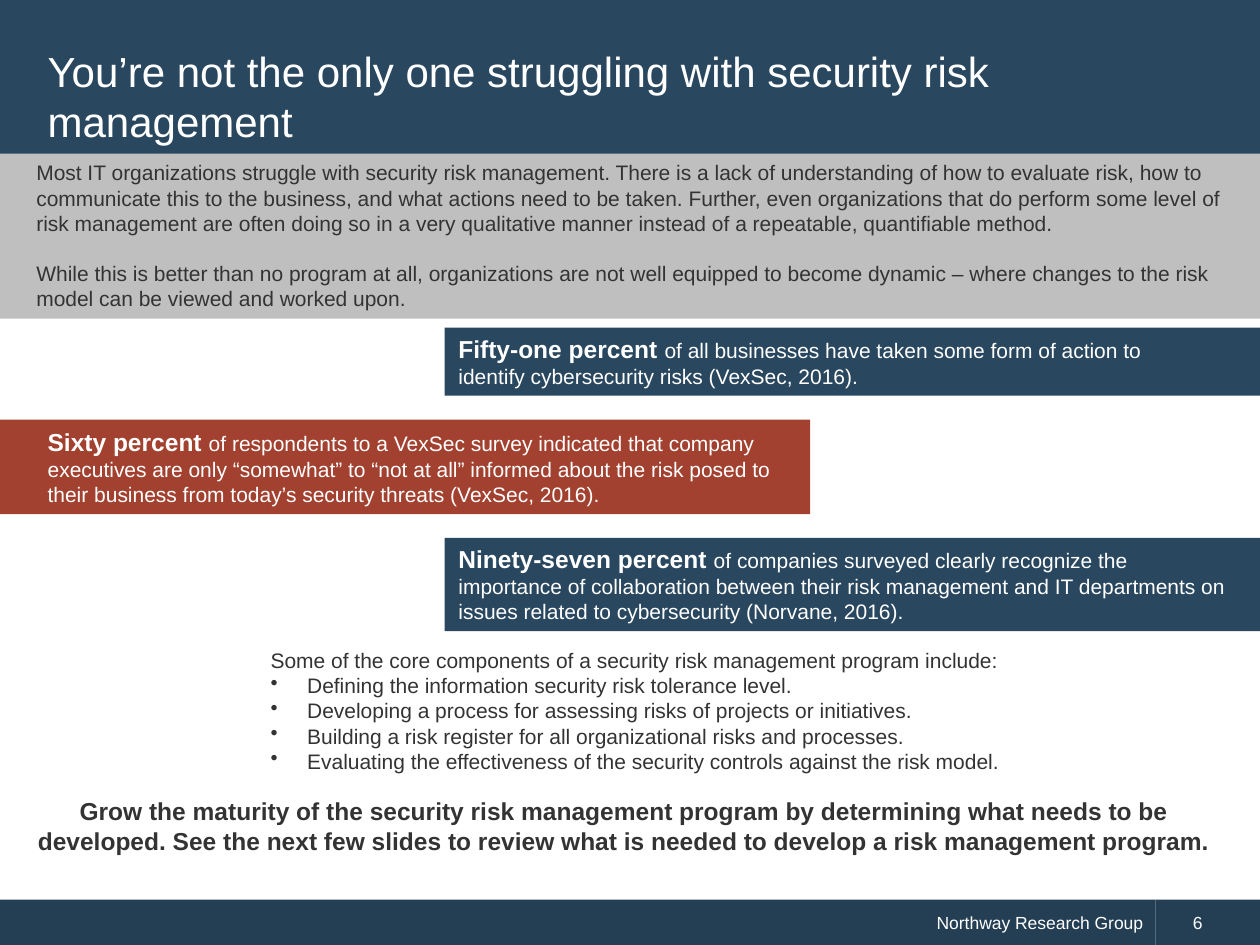
import pptx
import pptx.util
import pptx.dml.color
import pptx.enum.shapes
import pptx.enum.text
from lxml import etree

Inches = pptx.util.Inches
Pt = pptx.util.Pt
ALIGN = pptx.enum.text.PP_ALIGN
ANCHOR = pptx.enum.text.MSO_ANCHOR

COLORS = {
    "navy": "29475F",
    "footer": "243F54",
    "rust": "A24130",
    "gray": "BFBFBF",
    "ink": "333333",
    "white": "FFFFFF",
}


class SlideBuilder:
    font = "Arial"

    def __init__(self, page):
        self.page = page

    def color(self, name):
        return pptx.dml.color.RGBColor.from_string(COLORS[name])

    def bar(self, left, top, width, height, fill):
        box = self.page.shapes.add_shape(
            pptx.enum.shapes.MSO_SHAPE.RECTANGLE,
            Inches(left), Inches(top), Inches(width), Inches(height))
        box.shadow.inherit = False
        box.fill.solid()
        box.fill.fore_color.rgb = self.color(fill)
        box.line.fill.background()
        return box

    def text_box(self, left, top, width, height):
        return self.page.shapes.add_textbox(
            Inches(left), Inches(top), Inches(width), Inches(height))

    def add_text(self, box, paragraphs, color="ink", align=ALIGN.LEFT,
                 anchor=ANCHOR.TOP, margin=0, indent=0, gap=0, bullets_from=None):
        frame = box.text_frame
        frame.word_wrap = True
        frame.vertical_anchor = anchor
        for index, spans in enumerate(paragraphs):
            para = frame.paragraphs[0] if index == 0 else frame.add_paragraph()
            para.alignment = align
            if index and gap:
                para.space_before = Pt(gap)
            properties = para._p.get_or_add_pPr()
            properties.set("marL", str(Inches(margin)))
            properties.set("indent", str(Inches(indent)))
            if bullets_from is not None and index >= bullets_from:
                bullet = etree.SubElement(properties, pptx.oxml.ns.qn("a:buChar"))
                bullet.set("char", "•")
            for text, size, bold in spans:
                span = para.add_run()
                span.text = text
                span.font.name = self.font
                span.font.size = Pt(size)
                span.font.bold = bold
                span.font.color.rgb = self.color(color)

    def statistic(self, bar, text, fill, lead, detail):
        self.bar(*bar, fill)
        self.add_text(self.text_box(*text),
                      [[(lead + " ", 14, True), (detail, 12, False)]], "white")


def main():
    deck = pptx.Presentation()
    deck.slide_width, deck.slide_height = Inches(10), Inches(7.5)
    builder = SlideBuilder(deck.slides.add_slide(deck.slide_layouts[6]))

    footer = builder.bar(0, 7.14, 9.17, 0.37, "footer")
    builder.add_text(footer, [[("Northway Research Group", 10, False)]], "white",
                     ALIGN.RIGHT, ANCHOR.MIDDLE, margin=0.29)
    number = builder.bar(9.17, 7.14, 0.83, 0.37, "footer")
    builder.add_text(number, [[("6", 10, False)]], "white",
                     anchor=ANCHOR.MIDDLE, margin=0.2)

    builder.bar(0, 0, 10, 1.23, "navy")
    builder.add_text(
        builder.text_box(0.28, 0.28, 9.43, 0.96),
        [[("You’re not the only one struggling with security risk management", 24, False)]],
        "white", anchor=ANCHOR.MIDDLE)

    introduction = [
        "Most IT organizations struggle with security risk management. There is a lack of "
        "understanding of how to evaluate risk, how to communicate this to the business, and "
        "what actions need to be taken. Further, even organizations that do perform some level "
        "of risk management are often doing so in a very qualitative manner instead of a "
        "repeatable, quantifiable method.",
        "While this is better than no program at all, organizations are not well equipped to "
        "become dynamic – where changes to the risk model can be viewed and worked upon.",
    ]
    builder.add_text(builder.bar(0, 1.22, 10, 1.31, "gray"),
                     [[(text, 12, False)] for text in introduction],
                     margin=0.19, gap=14.4)

    statistics = [
        ((3.53, 2.6, 6.47, 0.54), (3.54, 2.6, 6.17, 0.54), "navy", "Fifty-one percent",
         "of all businesses have taken some form of action to identify cybersecurity risks "
         "(VexSec, 2016)."),
        ((0, 3.33, 6.43, 0.75), (0.28, 3.34, 6.17, 0.74), "rust", "Sixty percent",
         "of respondents to a VexSec survey indicated that company executives are only "
         "“somewhat” to “not at all” informed about the risk posed to their business from "
         "today’s security threats (VexSec, 2016)."),
        ((3.53, 4.27, 6.47, 0.74), (3.54, 4.27, 6.33, 0.74), "navy", "Ninety-seven percent",
         "of companies surveyed clearly recognize the importance of collaboration between "
         "their risk management and IT departments on issues related to cybersecurity "
         "(Norvane, 2016)."),
    ]
    for statistic in statistics:
        builder.statistic(*statistic)

    components = [
        "Some of the core components of a security risk management program include:",
        "Defining the information security risk tolerance level.",
        "Developing a process for assessing risks of projects or initiatives.",
        "Building a risk register for all organizational risks and processes.",
        "Evaluating the effectiveness of the security controls against the risk model.",
    ]
    builder.add_text(builder.text_box(0.28, 5.09, 9.43, 1.11),
                     [[(text, 12, False)] for text in components],
                     margin=2.06, indent=-0.29, bullets_from=1)

    builder.add_text(
        builder.text_box(0.19, 6.27, 9.53, 0.57),
        [[("Grow the maturity of the security risk management program by determining what "
           "needs to be developed. See the next few slides to review what is needed to "
           "develop a risk management program.", 14, True)]],
        align=ALIGN.CENTER)

    deck.save("out.pptx")


if __name__ == "__main__":
    main()
